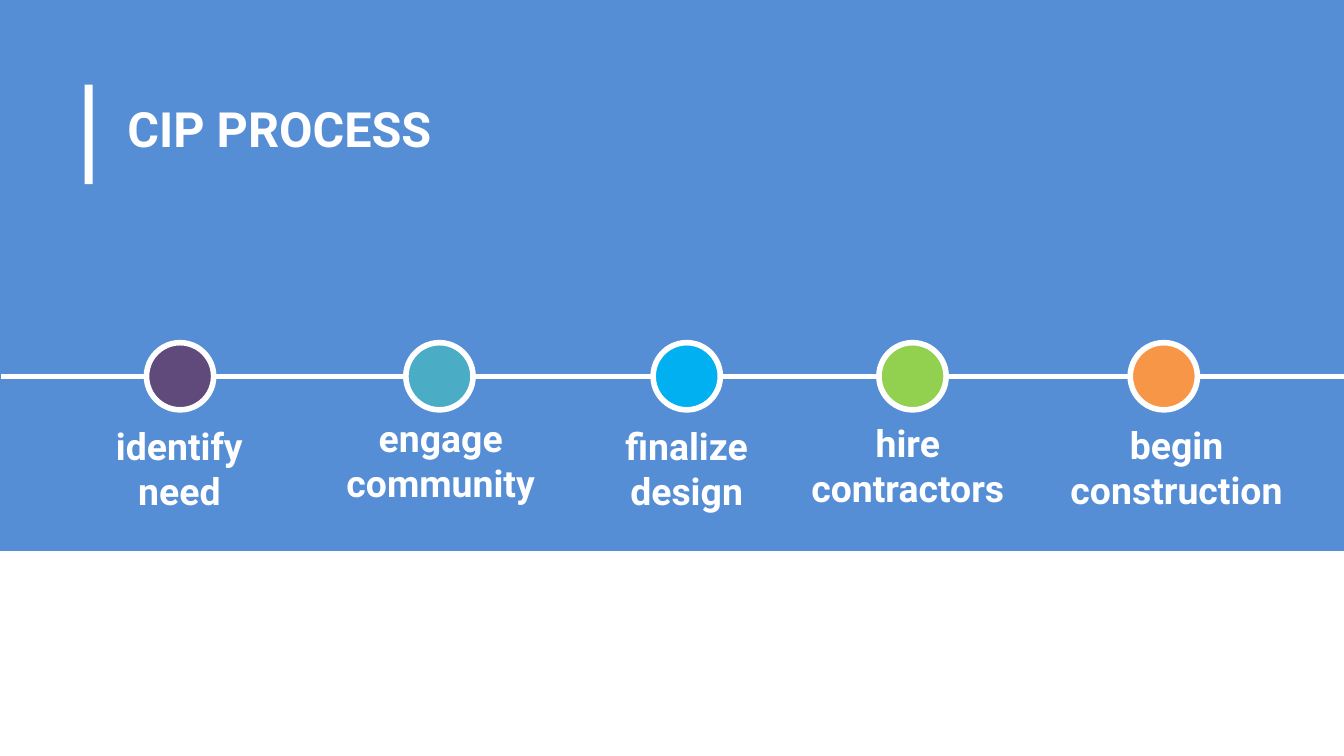
from dataclasses import dataclass
from lxml.etree import SubElement
from pptx import Presentation
from pptx.dml.color import RGBColor
from pptx.enum.shapes import MSO_CONNECTOR as Connector, MSO_SHAPE as Shape
from pptx.enum.text import PP_ALIGN as Align
from pptx.oxml.ns import qn
from pptx.util import Inches, Pt

COLORS = {
    "blue": "558ED5", "white": "FFFFFF", "purple": "604A7B", "teal": "4BACC6",
    "sky": "00B0F0", "green": "92D050", "orange": "F79646",
}


@dataclass
class Painter:
    """Draws on one page, on square grid cells: 100 columns across the width."""
    page: object
    cell: float = 0.1
    font: str = "Roboto"
    stroke: float = 3

    def grid(self, *cells):
        return [Inches(count * self.cell) for count in cells]

    def color(self, name):
        return RGBColor.from_string(COLORS[name])

    def outline(self, line):
        line.color.rgb = self.color("white")
        line.width = Pt(self.stroke)

    def shape(self, kind, area, fill, outlined=False):
        shape = self.page.shapes.add_shape(kind, *self.grid(*area))
        shape.shadow.inherit = False
        shape.fill.solid()
        shape.fill.fore_color.rgb = self.color(fill)
        if outlined:
            self.outline(shape.line)
        else:
            shape.line.fill.background()

    def line(self, start, end):
        line = self.page.shapes.add_connector(
            Connector.STRAIGHT, *self.grid(*start, *end))
        self.outline(line.line)
        SubElement(line._element.spPr, qn("a:effectLst"))

    def text(self, area, lines, size, align, inset=(1, 0.5)):
        box = self.page.shapes.add_textbox(*self.grid(*area))
        frame = box.text_frame
        frame.word_wrap = True
        side, edge = self.grid(*inset)
        frame.margin_left = frame.margin_right = side
        frame.margin_top = frame.margin_bottom = edge
        for index, words in enumerate(lines):
            para = frame.add_paragraph() if index else frame.paragraphs[0]
            para.alignment = align
            span = para.add_run()
            span.text = words
            span.font.name = self.font
            span.font.size = Pt(size)
            span.font.bold = True
            span.font.color.rgb = self.color("white")


# Dot centre column, dot colour, label area, label lines, label top inset
STEPS = [
    (13.4, "purple", (6.9, 30.5, 12.9, 8.1), ("identify", "need"), 1),
    (32.7, "teal", (24.3, 30.4, 17, 7.7), ("engage", "community"), 0.5),
    (51.1, "sky", (42.6, 31, 17, 7.7), ("finalize", "design"), 0.5),
    (67.9, "green", (58.7, 30.8, 17.7, 7.7), ("hire", "contractors"), 0.5),
    (86.6, "orange", (78.1, 30.9, 18.9, 7.7), ("begin", "construction"), 0.5),
]
AXIS = 28
DOT = 5


def main():
    # Widescreen page, 16 to 9
    deck = Presentation()
    deck.slide_width = Inches(10)
    deck.slide_height = deck.slide_width * 9 // 16
    painter = Painter(deck.slides.add_slide(deck.slide_layouts[6]))

    # Blue panel and title with its accent bar
    painter.shape(Shape.RECTANGLE, (0, 0, 100, 41), "blue")
    painter.shape(Shape.RECTANGLE, (6.3, 6.3, 0.6, 7.4), "white")
    painter.text((8.5, 6.4, 34.1, 6.5), ["CIP PROCESS"], 26, Align.LEFT, (1, 1))

    # Timeline with a dot and a label for each step
    painter.line((0.1, AXIS), (100, AXIS))
    for centre, fill, area, lines, top in STEPS:
        dot = (centre - DOT / 2, AXIS - DOT / 2, DOT, DOT)
        painter.shape(Shape.OVAL, dot, fill, outlined=True)
        painter.text(area, lines, 20, Align.CENTER, (1, top))

    deck.save("out.pptx")


if __name__ == "__main__":
    main()
